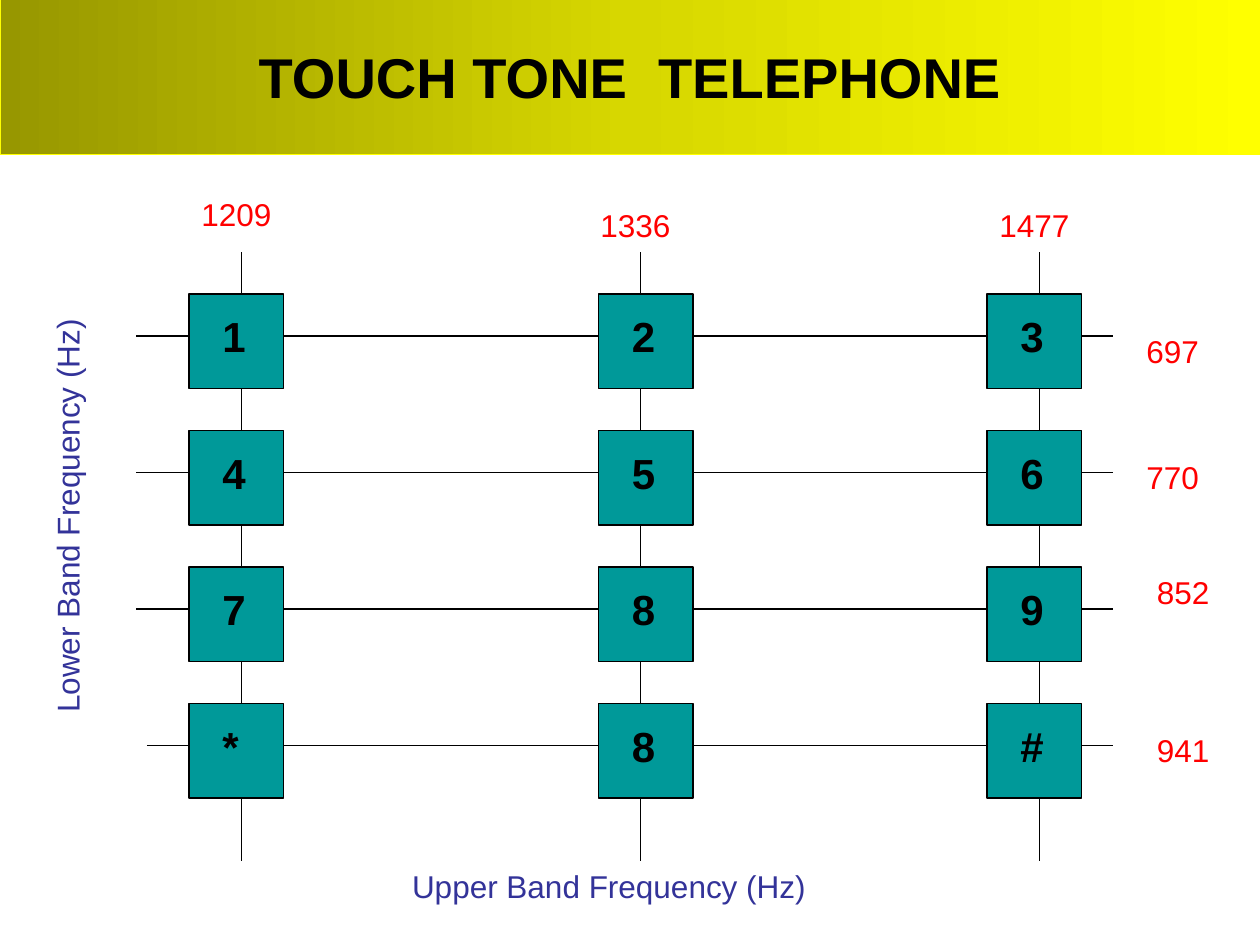
import copy

import lxml.etree
import pptx
import pptx.dml.color
import pptx.enum.shapes
import pptx.enum.text
import pptx.oxml.ns
import pptx.util

Pt = pptx.util.Pt
Align = pptx.enum.text.PP_ALIGN
qn = pptx.oxml.ns.qn

COLORS = {
    "ink": "000000",
    "key": "009999",
    "axis": "333399",
    "frequency": "FF0000",
    "banner_dark": "979700",
    "banner_mid": "D7D700",
    "banner_light": "FFFF00",
}


def rgb(name):
    return pptx.dml.color.RGBColor.from_string(COLORS[name])


class SlideBuilder:
    font = "Arial"
    line_width = 0.75

    def __init__(self, slide):
        self.slide = slide

    def set_text(self, shape, text, size, color, bold=False, align=None, spaced=False):
        shape.text_frame.text = text
        paragraph = shape.text_frame.paragraphs[0]
        if align is not None:
            paragraph.alignment = align
        if spaced:
            before = lxml.etree.SubElement(paragraph._p.get_or_add_pPr(), qn("a:spcBef"))
            lxml.etree.SubElement(before, qn("a:spcPct"), val="50000")
        font = paragraph.runs[0].font
        font.name = self.font
        font.size = Pt(size)
        font.bold = bold
        font.color.rgb = rgb(color)

    def box(self, left, top, width, height, outline, parent=None):
        shape = (parent or self.slide).shapes.add_shape(
            pptx.enum.shapes.MSO_SHAPE.RECTANGLE, Pt(left), Pt(top), Pt(width), Pt(height))
        shape.shadow.inherit = False
        shape.line.color.rgb = rgb(outline)
        shape.line.width = Pt(self.line_width)
        return shape

    def label(self, left, top, width, height, text, size=18, color="axis",
              wrap=True, parent=None, **style):
        label = (parent or self.slide).shapes.add_textbox(
            Pt(left), Pt(top), Pt(width), Pt(height))
        label.text_frame.word_wrap = wrap
        label.text_frame.auto_size = pptx.enum.text.MSO_AUTO_SIZE.SHAPE_TO_FIT_TEXT
        self.set_text(label, text, size, color, **style)
        return label

    def banner(self, left, top, width, height, text):
        banner = self.box(left, top, width, height, "banner_light")
        banner.fill.gradient()
        banner.fill.gradient_angle = 0
        stops = banner.fill._fill._gradFill.gsLst
        stops.insert(1, copy.deepcopy(stops[0]))
        shades = ("banner_dark", 0), ("banner_mid", 0.5), ("banner_light", 1)
        for stop, (shade, position) in zip(banner.fill.gradient_stops, shades):
            stop.color.rgb = rgb(shade)
            stop.position = position
        banner.text_frame.vertical_anchor = pptx.enum.text.MSO_ANCHOR.MIDDLE
        self.set_text(banner, text, 32, "ink", bold=True, align=Align.CENTER)

    def wire(self, x1, y1, x2, y2):
        wire = self.slide.shapes.add_connector(
            pptx.enum.shapes.MSO_CONNECTOR.STRAIGHT, Pt(x1), Pt(y1), Pt(x2), Pt(y2))
        wire.line.color.rgb = rgb("ink")
        wire.line.width = Pt(self.line_width)
        lxml.etree.SubElement(wire._element.spPr, qn("a:effectLst"))

    def key(self, left, top, symbol):
        group = self.slide.shapes.add_group_shape()
        button = self.box(left, top, 54, 54, "ink", parent=group)
        button.fill.solid()
        button.fill.fore_color.rgb = rgb("key")
        self.label(left + 12, top + 6, 24, 36, symbol, 24, "ink",
                   parent=group, bold=True, spaced=True)

    def frequency(self, left, top, width, value):
        self.label(left, top, width, 29, value, color="frequency", wrap=False)


def main():
    deck = pptx.Presentation()
    deck.slide_width, deck.slide_height = Pt(720), Pt(540)
    page = SlideBuilder(deck.slides.add_slide(deck.slide_layouts[6]))

    page.banner(0, -1.5, 720, 90, "TOUCH TONE  TELEPHONE")

    row_pitch = 78
    for column in range(3):
        x = 138 + 228 * column
        page.wire(x, 144, x, 492)
    for row, start in enumerate((78, 78, 78, 84)):
        y = 192 + row_pitch * row
        page.wire(start, y, 636, y)

    for row, symbols in enumerate(("123", "456", "789", "*8#")):
        for left, symbol in zip((108, 342, 564), symbols):
            page.key(left, 168 + row_pitch * row, symbol)

    page.label(60, 492, 576, 29, "Upper Band Frequency (Hz)",
               align=Align.CENTER, spaced=True)
    lower_band = page.label(-93.5, 268, 264, 29, "Lower Band Frequency (Hz)", spaced=True)
    lower_band.rotation = 270

    for value, left, top in (("697", 648, 186), ("770", 648, 258),
                             ("852", 654, 324), ("941", 654, 414)):
        page.frequency(left, top, 44.5, value)
    for value, left, top in (("1209", 108, 108), ("1336", 336, 114), ("1477", 564, 114)):
        page.frequency(left, top, 54.5, value)

    deck.save("out.pptx")


if __name__ == "__main__":
    main()
